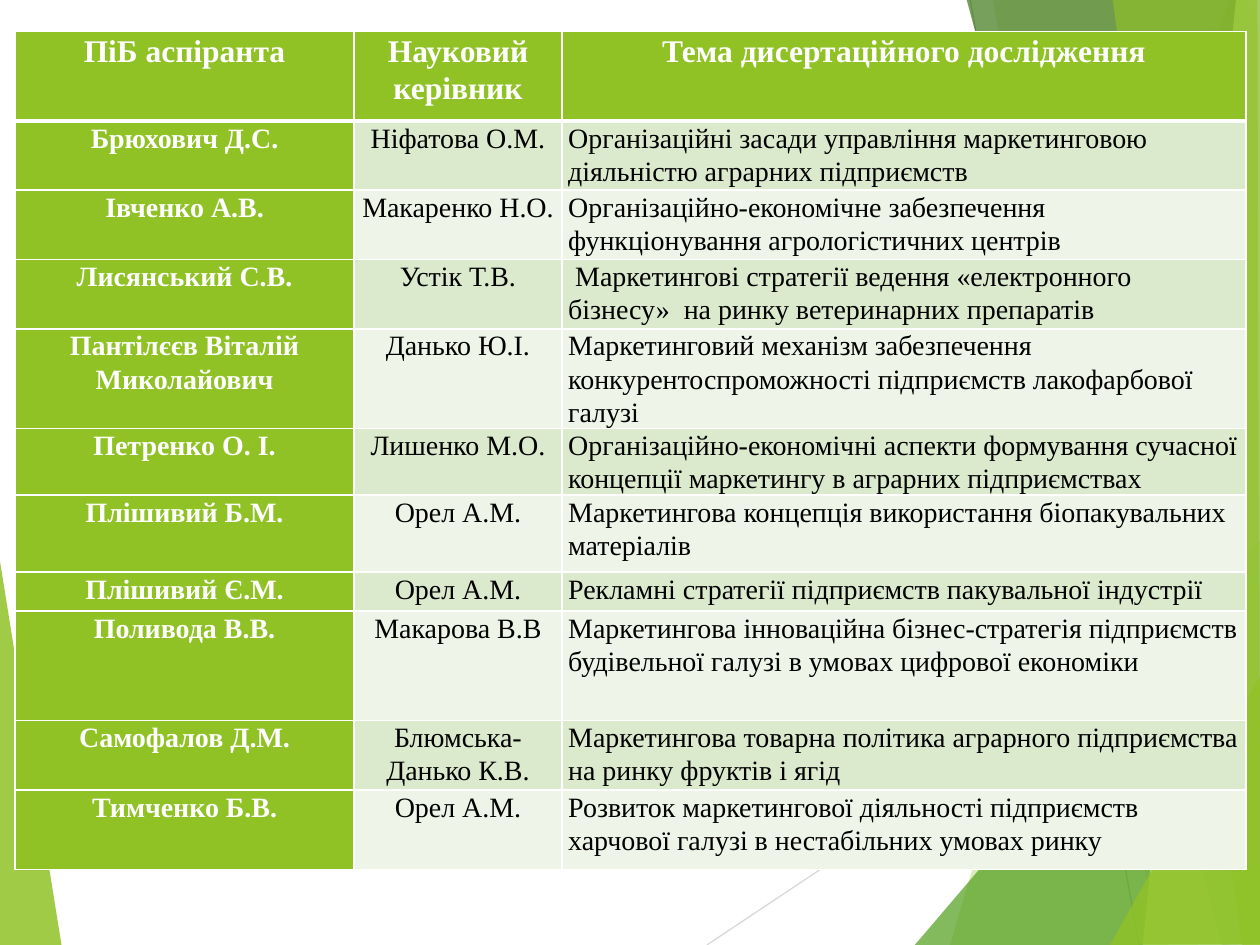
from lxml import etree
from pptx import Presentation
from pptx.dml.color import RGBColor
from pptx.enum import shapes, text
from pptx.oxml import ns
from pptx.util import Inches, Pt

FONT = "Times New Roman"
GREEN, WHITE, BLACK = "90C226", "FFFFFF", "000000"
BANDS = ("DBE9CD", "EEF4E8")
COLUMN_WIDTHS = (2.69, 1.65, 5.43)
ROW_HEIGHTS = (0.71, 0.55, 0.55, 0.55, 0.79, 0.52, 0.61, 0.31, 0.87, 0.55, 0.63)

LEFT_FACET = (GREEN, 85, [(-0.01, 4.39), (0.49, 7.51), (-0.01, 7.5)])
RAYS = (
    ("D9D9D9", (5.61, 7.5), (10.01, 4.57)),
    ("BFBFBF", (7.7, 0), (9.04, 7.5)),
)
RIGHT_FACETS = (
    (GREEN, 30, [(9.75, 0), (7.54, 7.5), (10.02, 7.51), (10.01, 0.01)]),
    (GREEN, 20, [(7.88, -0.01), (9.19, 7.5), (10.01, 7.5), (10.01, -0.01)]),
    ("54A021", 72, [(7.26, 7.5), (10, 4.29), (10.01, 7.5)]),
    ("3F7819", 70, [(7.67, -0.01), (9.7, 7.5), (10.01, 7.49), (10.01, -0.01)]),
    ("C0E474", 70, [(9.81, -0.01), (9.07, 7.5), (10.01, 7.5), (10, -0.01)]),
    (GREEN, 65, [(8.83, -0.01), (9.86, 7.5), (10, 7.5), (9.98, -0.01)]),
    (GREEN, 80, [(8.81, 7.5), (10.01, 5.35), (10.01, 7.49)]),
)

ROWS = (
    ("ПіБ аспіранта", "Науковий керівник", "Тема дисертаційного дослідження"),
    ("Брюхович Д.С.", "Ніфатова О.М.",
     "Організаційні засади управління маркетинговою діяльністю аграрних підприємств"),
    ("Івченко А.В.", "Макаренко Н.О.",
     "Організаційно-економічне забезпечення функціонування агрологістичних центрів"),
    ("Лисянський С.В.", "Устік Т.В.",
     " Маркетингові стратегії ведення «електронного бізнесу»  на ринку ветеринарних препаратів"),
    ("Пантілєєв Віталій Миколайович", "Данько Ю.І.",
     "Маркетинговий механізм забезпечення конкурентоспроможності підприємств лакофарбової галузі"),
    ("Петренко О. І.", "Лишенко М.О.",
     "Організаційно-економічні аспекти формування сучасної концепції маркетингу "
     "в аграрних підприємствах "),
    ("Плішивий Б.М.", "Орел А.М.",
     "Маркетингова концепція використання біопакувальних матеріалів"),
    ("Плішивий Є.М.", "Орел А.М.",
     "Рекламні стратегії підприємств пакувальної індустрії"),
    ("Поливода В.В.", "Макарова В.В",
     "Маркетингова інноваційна бізнес-стратегія підприємств будівельної галузі "
     "в умовах цифрової економіки"),
    ("Самофалов Д.М.", "Блюмська-Данько К.В.",
     "Маркетингова товарна політика аграрного підприємства на ринку фруктів і ягід"),
    ("Тимченко Б.В.", "Орел А.М.",
     "Розвиток маркетингової діяльності підприємств харчової галузі "
     "в нестабільних умовах ринку"),
)


def color(value):
    """Turn a hex string into a colour."""
    return RGBColor.from_string(value)


def add_facet(page, fill, opacity, points):
    """Draw a translucent polygon without an outline."""
    corners = [(Inches(x), Inches(y)) for x, y in points]
    builder = page.shapes.build_freeform(*corners[0], scale=1.0)
    builder.add_line_segments(corners[1:], close=True)
    facet = builder.convert_to_shape()
    facet.shadow.inherit = False
    facet.line.fill.background()
    facet.fill.solid()
    facet.fill.fore_color.rgb = color(fill)
    tint = facet._element.spPr.find(".//" + ns.qn("a:srgbClr"))
    etree.SubElement(tint, ns.qn("a:alpha"), val=str(opacity * 1000))


def add_ray(page, stroke, start, end):
    """Draw a thin straight line."""
    ends = [Inches(value) for value in start + end]
    ray = page.shapes.add_connector(shapes.MSO_CONNECTOR.STRAIGHT, *ends)
    ray.line.color.rgb = color(stroke)
    ray.line.width = Pt(0.75)
    etree.SubElement(ray._element.spPr, ns.qn("a:effectLst"))


def set_borders(cell, top, bottom):
    """Give a cell white borders, with top and bottom widths in points."""
    properties = cell._tc.get_or_add_tcPr()
    widths = (("lnL", 1), ("lnR", 1), ("lnT", top), ("lnB", bottom))
    for index, (side, width) in enumerate(widths):
        line = etree.Element(ns.qn("a:" + side), w=str(Pt(width)))
        fill = etree.SubElement(line, ns.qn("a:solidFill"))
        etree.SubElement(fill, ns.qn("a:srgbClr"), val=WHITE)
        properties.insert(index, line)


def fill_cell(cell, words, row, column):
    """Write and style a cell according to its place in the table."""
    header = row == 0
    strong = header or column == 0
    cell.margin_left = cell.margin_right = Inches(0.05)
    cell.margin_top = cell.margin_bottom = 0
    cell.fill.solid()
    cell.fill.fore_color.rgb = color(GREEN if strong else BANDS[(row - 1) % 2])
    set_borders(cell, 3 if row == 1 else 1, 3 if header else 1)
    cell.text_frame.text = words
    para = cell.text_frame.paragraphs[0]
    centred = header or column < 2
    para.alignment = text.PP_ALIGN.CENTER if centred else text.PP_ALIGN.LEFT
    para.line_spacing = 1.07
    para.space_after = Pt(8)
    font = para.runs[0].font
    font.name = FONT
    font.size = Pt(18 if header else 16)
    font.bold = strong
    font.color.rgb = color(WHITE if strong else BLACK)


def add_topics_table(page):
    """Add the table of students, supervisors and topics."""
    frame = page.shapes.add_table(
        len(ROWS), len(COLUMN_WIDTHS), Inches(0.12), Inches(0.25),
        Inches(sum(COLUMN_WIDTHS)), Inches(sum(ROW_HEIGHTS)))
    table = frame.table
    table.first_col = True
    for column, width in zip(table.columns, COLUMN_WIDTHS):
        column.width = Inches(width)
    for row, height in zip(table.rows, ROW_HEIGHTS):
        row.height = Inches(height)
    for row, entries in enumerate(ROWS):
        for column, words in enumerate(entries):
            fill_cell(table.cell(row, column), words, row, column)


def main():
    """Build the slide and save the deck."""
    deck = Presentation()
    deck.slide_width, deck.slide_height = Inches(10), Inches(7.5)
    page = deck.slides.add_slide(deck.slide_layouts[6])
    add_facet(page, *LEFT_FACET)
    for ray in RAYS:
        add_ray(page, *ray)
    for facet in RIGHT_FACETS:
        add_facet(page, *facet)
    add_topics_table(page)
    deck.save("out.pptx")


if __name__ == "__main__":
    main()
